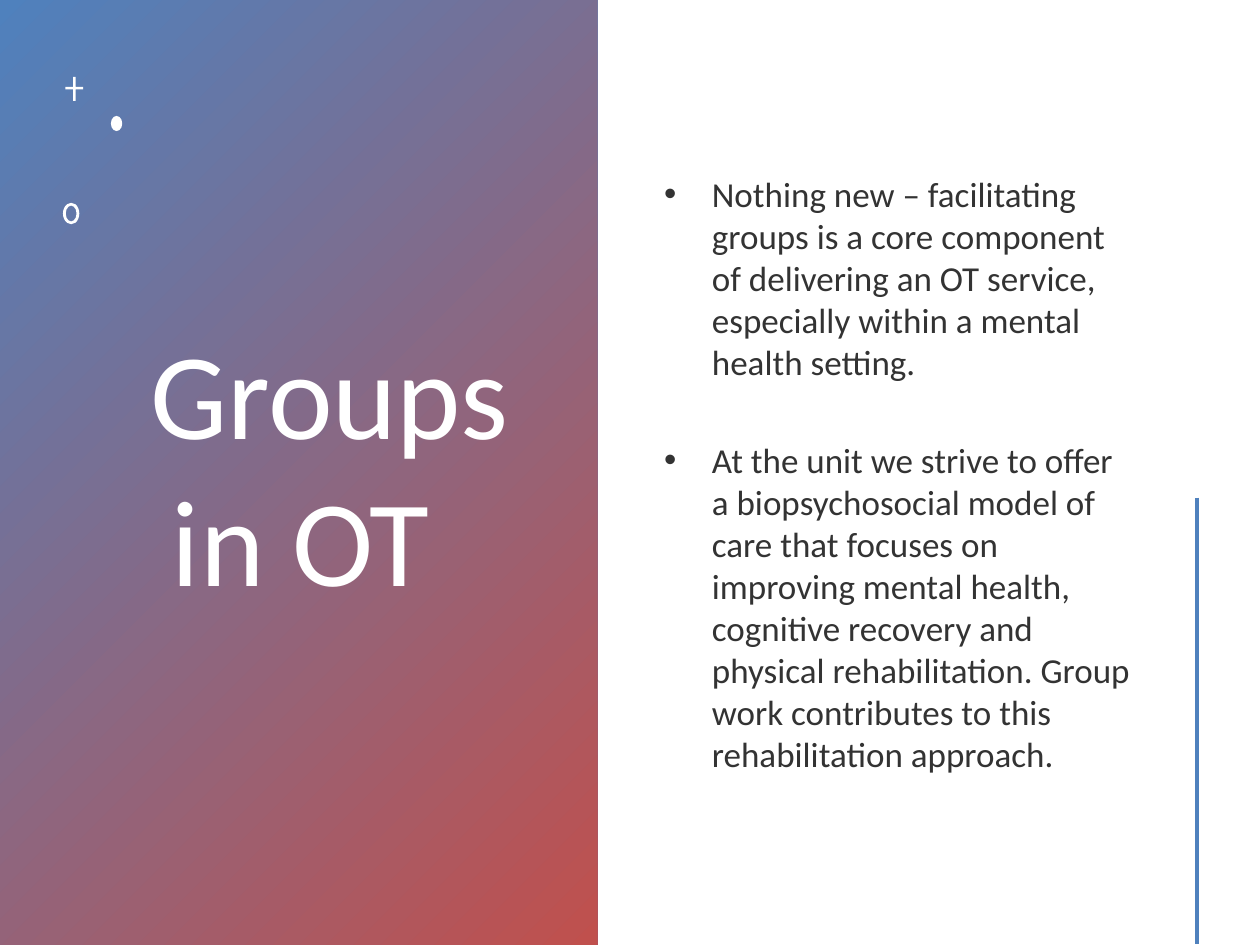
from dataclasses import dataclass

import pptx
import pptx.dml.color
import pptx.enum.shapes
import pptx.enum.text
import pptx.oxml
import pptx.oxml.ns
import pptx.util

Inches = pptx.util.Inches
Pt = pptx.util.Pt
RGBColor = pptx.dml.color.RGBColor
Preset = pptx.enum.shapes.MSO_SHAPE
DRAWING_NS = pptx.oxml.ns.nsdecls("a")


@dataclass(frozen=True)
class Theme:
    font: str = "Calibri"
    blue: RGBColor = RGBColor(0x4F, 0x81, 0xBD)
    red: RGBColor = RGBColor(0xC0, 0x50, 0x4D)
    white: RGBColor = RGBColor(0xFF, 0xFF, 0xFF)
    text: RGBColor = RGBColor(0x33, 0x33, 0x33)
    title_size: int = 70
    body_size: int = 20
    bullet_gap: int = 32


THEME = Theme()
TITLE = "Groups in OT\t"
BULLETS = [
    "Nothing new – facilitating groups is a core component of delivering "
    "an OT service, especially within a mental health setting.",
    "At the unit we strive to offer a biopsychosocial model of care that "
    "focuses on improving mental health, cognitive recovery and physical "
    "rehabilitation. Group work contributes to this rehabilitation approach.",
]


def place(shape, left, top, width, height):
    shape.left, shape.top = Inches(left), Inches(top)
    shape.width, shape.height = Inches(width), Inches(height)


def add_run(paragraph, text, size, color):
    run = paragraph.add_run()
    run.text = text
    run.font.name = THEME.font
    run.font.size = Pt(size)
    run.font.color.rgb = color


def prepare_frame(placeholder):
    frame = placeholder.text_frame
    frame.word_wrap = True
    frame.auto_size = pptx.enum.text.MSO_AUTO_SIZE.NONE
    frame.vertical_anchor = pptx.enum.text.MSO_ANCHOR.MIDDLE
    return frame


def fill_title(placeholder):
    place(placeholder, 0.97, 0.42, 3.29, 6.53)
    paragraph = prepare_frame(placeholder).paragraphs[0]
    paragraph.alignment = pptx.enum.text.PP_ALIGN.CENTER
    add_run(paragraph, TITLE, THEME.title_size, THEME.white)


def set_bullet(paragraph):
    properties = paragraph._p.get_or_add_pPr()
    properties.set("marL", str(Inches(0.38)))
    properties.set("indent", str(-Inches(0.38)))
    for xml in ('<a:buFont %s typeface="Arial"/>', '<a:buChar %s char="•"/>'):
        properties.append(pptx.oxml.parse_xml(xml % DRAWING_NS))


def fill_bullets(placeholder):
    place(placeholder, 5.17, 0.57, 3.91, 6.38)
    frame = prepare_frame(placeholder)
    for index, text in enumerate(BULLETS):
        paragraph = frame.add_paragraph() if index else frame.paragraphs[0]
        paragraph.space_before = Pt(THEME.bullet_gap if index else 4)
        set_bullet(paragraph)
        add_run(paragraph, text, THEME.body_size, THEME.text)


def add_gradient_panel(slide):
    """Add the left panel behind the placeholders."""
    panel = slide.shapes.add_shape(
        Preset.RECTANGLE, 0, 0, Inches(4.74), Inches(7.5))
    panel.shadow.inherit = False
    panel.line.fill.background()
    panel.fill.gradient()
    panel.fill.gradient_angle = 315
    for stop, color in zip(panel.fill.gradient_stops, (THEME.blue, THEME.red)):
        stop.color.rgb = color
    panel.element.getparent().insert(2, panel.element)


def paint_white(shape):
    shape.shadow.inherit = False
    shape.fill.solid()
    shape.fill.fore_color.rgb = THEME.white
    shape.line.fill.background()


def add_ornament(slide, preset, left, top, width, height):
    shape = slide.shapes.add_shape(
        preset, Inches(left), Inches(top), Inches(width), Inches(height))
    paint_white(shape)
    return shape


def add_plus(slide):
    """Draw a thin plus, with its corners in hundredths of an inch."""
    corners = [(58, 61), (60, 61), (60, 69), (66, 69), (66, 71), (60, 71),
               (60, 80), (58, 80), (58, 71), (52, 71), (52, 69), (58, 69)]
    builder = slide.shapes.build_freeform(*corners[0], scale=Inches(0.01))
    builder.add_line_segments(corners[1:], close=True)
    paint_white(builder.convert_to_shape())


def add_accent_line(slide):
    line = slide.shapes.add_connector(
        pptx.enum.shapes.MSO_CONNECTOR.STRAIGHT,
        Inches(9.5), Inches(3.95), Inches(9.5), Inches(7.49))
    line.line.color.rgb = THEME.blue
    line.line.width = Pt(2)
    line.element.spPr.append(
        pptx.oxml.parse_xml("<a:effectLst %s/>" % DRAWING_NS))


def main():
    presentation = pptx.Presentation()
    presentation.slide_width = Inches(10)
    presentation.slide_height = Inches(7.5)
    slide = presentation.slides.add_slide(presentation.slide_layouts[1])
    add_gradient_panel(slide)
    fill_title(slide.shapes.title)
    add_plus(slide)
    add_ornament(slide, Preset.OVAL, 0.88, 0.92, 0.09, 0.12)
    ring = add_ornament(slide, Preset.DONUT, 0.5, 1.61, 0.13, 0.17)
    ring.adjustments[0] = 0.17
    fill_bullets(slide.placeholders[1])
    add_accent_line(slide)
    presentation.save("out.pptx")


if __name__ == "__main__":
    main()
